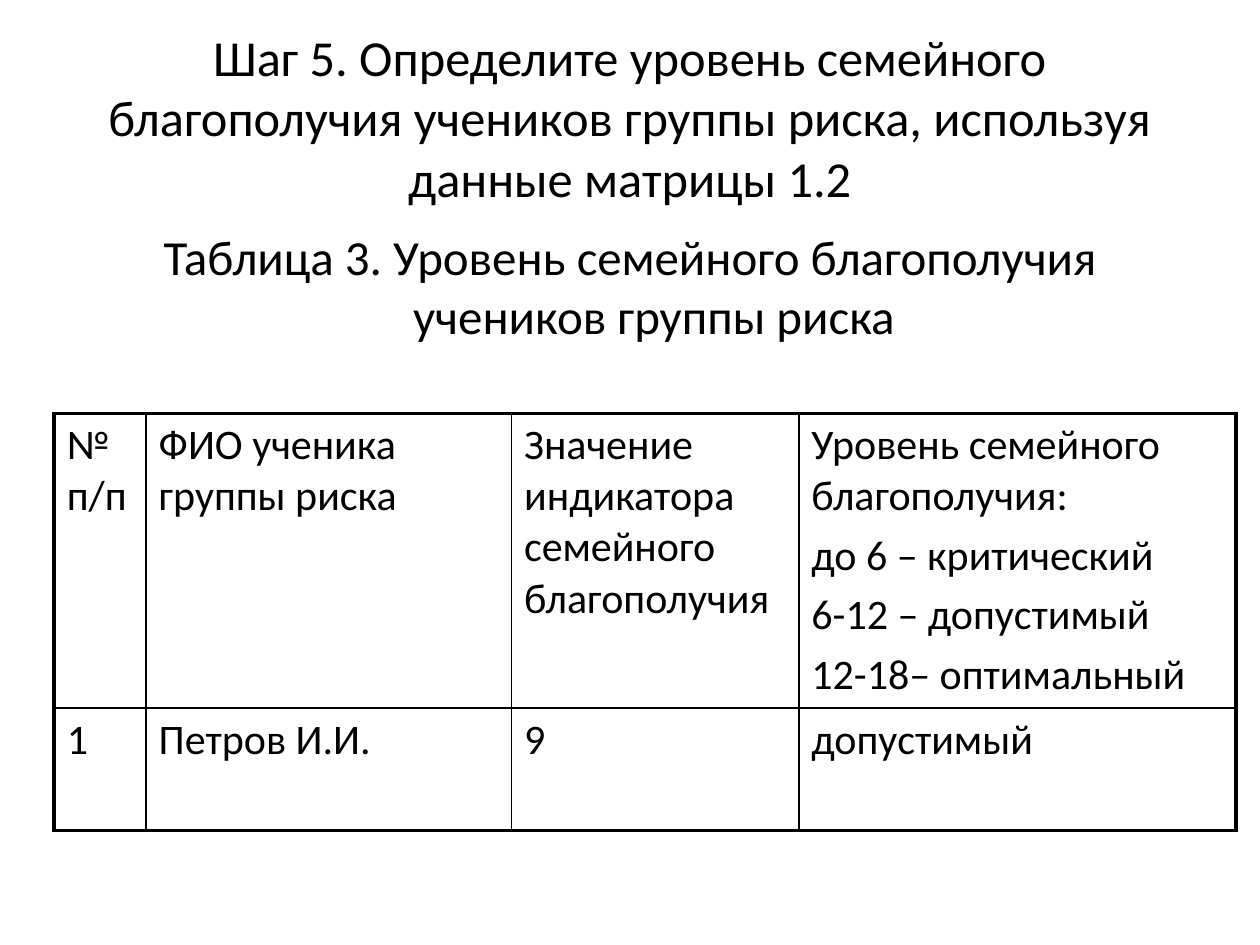
from lxml import etree
from pptx import Presentation
from pptx.dml.color import RGBColor
from pptx.enum.text import MSO_ANCHOR, PP_ALIGN
from pptx.oxml.ns import qn
from pptx.util import Inches, Pt

CENTER = PP_ALIGN.CENTER
MIDDLE = MSO_ANCHOR.MIDDLE
TOP = MSO_ANCHOR.TOP
BLACK = "000000"
THIN, THICK = 1, 2.25


def style(para, size, gap=0):
    para.font.name = "Calibri"
    para.font.size = Pt(size)
    para.font.color.rgb = RGBColor.from_string(BLACK)
    para.space_before = Pt(gap)


def border(cell, side, width):
    line = etree.SubElement(cell._tc.get_or_add_tcPr(), qn(f"a:{side}"), w=str(Pt(width)))
    fill = etree.SubElement(line, qn("a:solidFill"))
    etree.SubElement(fill, qn("a:srgbClr"), val=BLACK)


deck = Presentation()
deck.slide_width, deck.slide_height = Inches(10), Inches(7.5)
slide = deck.slides.add_slide(deck.slide_layouts[6])

heads = [
    ("Шаг 5. Определите уровень семейного благополучия учеников группы риска, используя данные матрицы 1.2",
     0.3, 1.25, 28.8, 0, MIDDLE, 0),
    ("Таблица 3. Уровень семейного благополучия учеников группы риска",
     1.75, 4.95, 28, 5.6, TOP, 0.38),
]
for text, top, height, size, gap, anchor, indent in heads:
    box = slide.shapes.add_textbox(Inches(0.5), Inches(top), Inches(9), Inches(height))
    frame = box.text_frame
    frame.word_wrap = True
    frame.vertical_anchor = anchor
    frame.text = text
    para = frame.paragraphs[0]
    para.alignment = CENTER
    style(para, size, gap)
    props = para._p.get_or_add_pPr()
    props.set("marL", str(Inches(indent)))
    props.set("indent", str(-Inches(indent)))

rows = [
    ["№ п/п", "ФИО ученика группы риска", "Значение индикатора семейного благополучия",
     "Уровень семейного благополучия:\nдо 6 – критический\n6-12 – допустимый\n12-18– оптимальный"],
    ["1", "Петров И.И.", "9", "допустимый"],
]
widths = [0.73, 2.9, 2.28, 3.47]
heights = [2.34, 0.97]
table = slide.shapes.add_table(
    len(rows), len(widths), Inches(0.43), Inches(3.28), Inches(sum(widths)), Inches(sum(heights))
).table
table.first_row = table.horz_banding = False
for col, width in zip(table.columns, widths):
    col.width = Inches(width)
for row, height in zip(table.rows, heights):
    row.height = Inches(height)

for r, row in enumerate(rows):
    for c, text in enumerate(row):
        cell = table.cell(r, c)
        cell.text = text
        for para in cell.text_frame.paragraphs:
            style(para, 24, 4.8)
        edges = {
            "lnL": c == 0,
            "lnR": c == len(widths) - 1,
            "lnT": r == 0,
            "lnB": r == len(rows) - 1,
        }
        for side, outer in edges.items():
            border(cell, side, THICK if outer else THIN)
        cell.fill.background()

deck.save("out.pptx")
